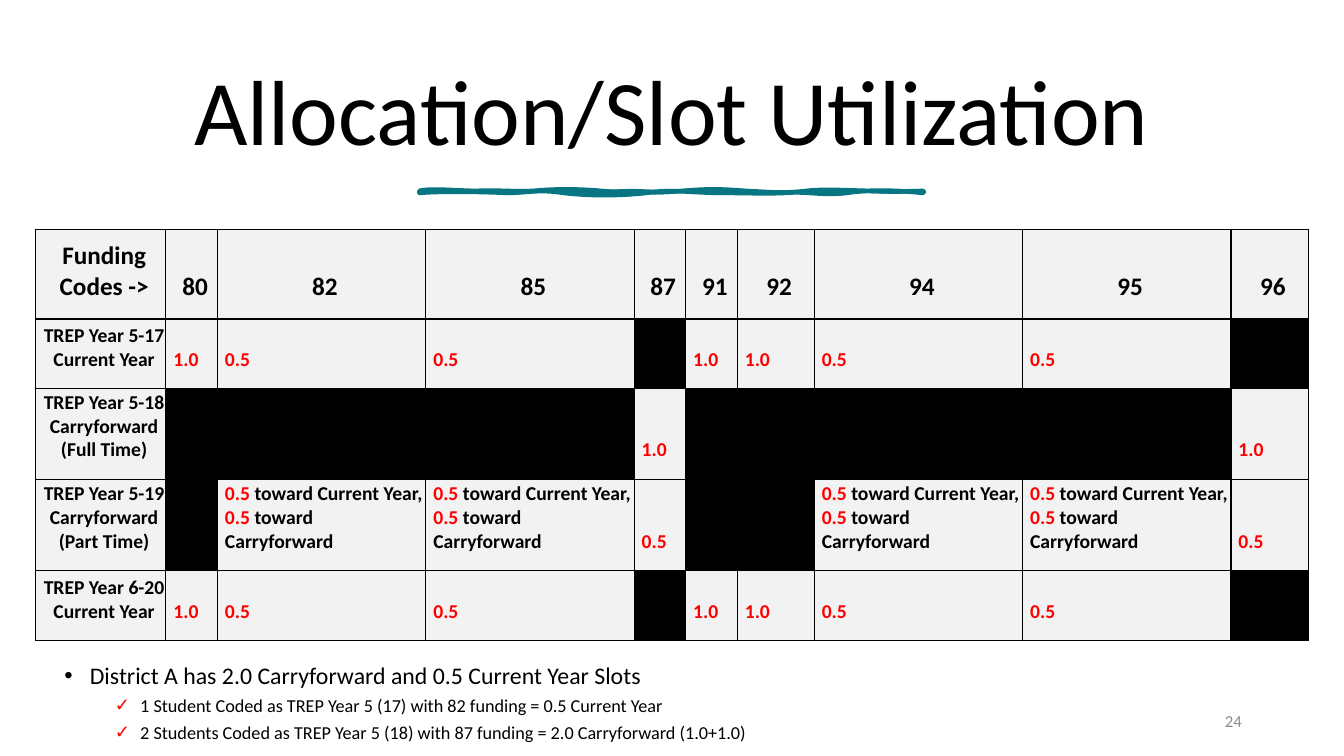
from lxml import etree
from pptx import Presentation
from pptx.dml.color import RGBColor
from pptx.enum.text import MSO_ANCHOR, MSO_AUTO_SIZE, PP_ALIGN
from pptx.oxml.ns import qn
from pptx.util import Cm, Pt

MIDDLE, BOTTOM = MSO_ANCHOR.MIDDLE, MSO_ANCHOR.BOTTOM
LEFT, CENTER, RIGHT = PP_ALIGN.LEFT, PP_ALIGN.CENTER, PP_ALIGN.RIGHT
NO_AUTOFIT = MSO_AUTO_SIZE.NONE
FONT = "Calibri"
COLORS = {"black": "000000", "red": "FF0000", "teal": "077682",
          "cell": "F2F2F2", "gray": "8C8C8C"}

COLUMN_WIDTHS = [3.28, 1.3, 5.25, 5.25, 1.3, 1.3, 1.94, 5.25, 5.25, 1.95]
ROW_HEIGHTS = [2.25, 1.75, 2.28, 2.31, 1.75]
# A bar separates the red amount from the black words that follow it.
SPLIT = "0.5| toward Current Year, |0.5| toward Carryforward"
CURRENT_YEAR = ["1.0", "0.5", "0.5", "", "1.0", "1.0", "0.5", "0.5", ""]
ROWS = [
    ["Funding Codes ->", "80", "82", "85", "87", "91", "92", "94", "95", "96"],
    ["TREP Year 5-17 Current Year", *CURRENT_YEAR],
    ["TREP Year 5-18 Carryforward\n(Full Time)",
     "", "", "", "1.0", "", "", "", "", "1.0"],
    ["TREP Year 5-19 Carryforward\n(Part Time)",
     "", SPLIT, SPLIT, "0.5", "", "", SPLIT, SPLIT, "0.5"],
    ["TREP Year 6-20 Current Year", *CURRENT_YEAR],
]
BULLETS = [
    (0, "District A has 2.0 Carryforward and 0.5 Current Year Slots"),
    (1, "1 Student Coded as TREP Year 5 (17) with 82 funding = 0.5 Current Year"),
    (1, "2 Students Coded as TREP Year 5 (18) with 87 funding = 2.0 Carryforward (1.0+1.0)"),
]
# Bullet sign, its colour, left margin in cm, text size, space before
LEVELS = [("•", "black", 0.64, 17, 10), ("✓", "red", 1.91, 13, 5)]

# Bezier points (two controls, then an end) in 1/500 of the stroke width
STROKE_OUTLINE = [
    (12, -3), (38, 0), (57, 0), (76, -1), (93, 1), (113, 0),
    (133, -2), (158, -2), (180, 0), (201, 2), (237, 2), (261, 0),
    (286, -2), (298, -2), (323, 0), (347, 1), (358, 3), (384, 0),
    (410, -3), (451, 2), (500, 0), (501, 1), (500, 1), (500, 2),
    (479, 0), (449, -2), (424, 2), (399, 5), (385, 0), (363, 2),
    (340, 3), (331, 2), (301, 2), (271, 2), (251, -2), (225, 2),
    (198, 5), (169, 5), (143, 2), (118, -2), (107, 2), (87, 2),
    (67, 1), (22, 0), (0, 2), (0, 1), (0, 0), (0, 0),
]
STROKE_BODY = [
    (16, -1), (36, -2), (62, 0), (87, 1), (92, 2), (118, 0),
    (144, -2), (158, 2), (180, 0), (202, -3), (223, -2), (251, 0),
    (279, 1), (308, -3), (328, 0), (347, 2), (386, -2), (409, 0),
    (432, 1), (456, 3), (500, 0), (500, 0), (500, 1), (500, 2),
    (463, 4), (460, 2), (424, 2), (388, -1), (380, 1), (343, 2),
    (305, 2), (300, -2), (261, 2), (223, 6), (221, 0), (205, 2),
    (188, 3), (156, 3), (128, 2), (101, 0), (88, 1), (62, 2),
    (36, 2), (25, -1), (0, 2), (0, 1), (0, 0), (0, 0),
]


def color(name):
    return RGBColor.from_string(COLORS[name])


def format_span(span, size, color_name, bold=False):
    span.font.name = FONT
    span.font.size = Pt(size)
    span.font.bold = bold
    span.font.color.rgb = color(color_name)


def place(shape, box):
    shape.left, shape.top, shape.width, shape.height = (Cm(v) for v in box)


def fill_title(page, box):
    title = page.shapes.title
    place(title, box)
    frame = title.text_frame
    frame.text = "Allocation/Slot Utilization"
    frame.auto_size = NO_AUTOFIT
    frame.vertical_anchor = MIDDLE
    para = frame.paragraphs[0]
    para.alignment = CENTER
    para.line_spacing = 0.9
    format_span(para.runs[0], 66, "black")


def bend_lines(shape):
    """Make each contour its own outline, with every three lines one Bezier curve."""
    joined = next(shape._element.iter(qn("a:path")))
    starts = joined.findall(qn("a:moveTo"))
    lines = joined.findall(qn("a:lnTo"))
    count = len(lines) // len(starts)
    settings = [{"fill": "none"}, {"stroke": "0"}]
    for number, (start, setting) in enumerate(zip(starts, settings)):
        contour = etree.SubElement(joined.getparent(), qn("a:path"),
                                   w=joined.get("w"), h=joined.get("h"), **setting)
        contour.append(start)
        for first in range(number * count, (number + 1) * count, 3):
            curve = etree.SubElement(contour, qn("a:cubicBezTo"))
            for line in lines[first:first + 3]:
                curve.append(line[0])
        etree.SubElement(contour, qn("a:close"))
    joined.getparent().remove(joined)


def draw_brush_stroke(page, left, top, width):
    unit = Cm(width) / 500
    builder = page.shapes.build_freeform(scale=unit)
    builder.add_line_segments(STROKE_OUTLINE, close=True)
    builder.move_to(0, 0)
    builder.add_line_segments(STROKE_BODY, close=True)
    stroke = builder.convert_to_shape(Cm(left), Cm(top))
    bend_lines(stroke)
    stroke.shadow.inherit = False
    stroke.fill.solid()
    stroke.fill.fore_color.rgb = color("teal")
    stroke.line.color.rgb = color("teal")
    stroke.line.width = Pt(3.25)


def style_cell(cell, fill_name):
    properties = cell._tc.get_or_add_tcPr()
    for side in ("a:lnL", "a:lnR", "a:lnT", "a:lnB"):
        line = etree.SubElement(properties, qn(side), w=str(Pt(1)))
        solid = etree.SubElement(line, qn("a:solidFill"))
        etree.SubElement(solid, qn("a:srgbClr"), val=COLORS["black"])
    cell.fill.solid()
    cell.fill.fore_color.rgb = color(fill_name)
    cell.margin_left, cell.margin_right = Cm(0.19), Cm(0.02)
    cell.margin_top, cell.margin_bottom = Cm(0.05), Cm(0.43)
    cell.vertical_anchor = BOTTOM


def write_cell(cell, text, size, is_heading):
    frame = cell.text_frame
    for number, line in enumerate(text.split("\n")):
        para = frame.add_paragraph() if number else frame.paragraphs[0]
        para.alignment = CENTER if is_heading else LEFT
        for index, part in enumerate(line.split("|")):
            span = para.add_run()
            span.text = part
            is_amount = not is_heading and index % 2 == 0
            format_span(span, size, "red" if is_amount else "black", bold=True)


def add_slot_table(page, left, top):
    table = page.shapes.add_table(
        len(ROWS), len(COLUMN_WIDTHS), Cm(left), Cm(top),
        Cm(sum(COLUMN_WIDTHS)), Cm(sum(ROW_HEIGHTS))).table
    table.first_row = table.horz_banding = False
    for column, width in zip(table.columns, COLUMN_WIDTHS):
        column.width = Cm(width)
    for row, height in zip(table.rows, ROW_HEIGHTS):
        row.height = Cm(height)
    for r, texts in enumerate(ROWS):
        for c, text in enumerate(texts):
            cell = table.cell(r, c)
            style_cell(cell, "cell" if text else "black")
            if text:
                write_cell(cell, text, 14 if r else 18, r == 0 or c == 0)


def fill_bullets(page, box):
    body = page.placeholders[1]
    place(body, box)
    frame = body.text_frame
    frame.text = "\n".join(text for level, text in BULLETS)
    frame.auto_size = NO_AUTOFIT
    for number, (para, (level, text)) in enumerate(zip(frame.paragraphs, BULLETS)):
        sign, sign_color, margin, size, space = LEVELS[level]
        para.level = level
        para.line_spacing = 0.9
        para.space_before = Pt(space if number else 0)
        properties = para._p.get_or_add_pPr()
        properties.set("marL", str(Cm(margin)))
        properties.set("indent", str(-Cm(0.64)))
        bullet_color = etree.SubElement(properties, qn("a:buClr"))
        etree.SubElement(bullet_color, qn("a:srgbClr"), val=COLORS[sign_color])
        etree.SubElement(properties, qn("a:buFont"), typeface="Arial")
        etree.SubElement(properties, qn("a:buChar"), char=sign)
        format_span(para.runs[0], size, "black")


def add_page_number(page, box):
    frame = page.shapes.add_textbox(*(Cm(v) for v in box)).text_frame
    frame.word_wrap = True
    frame.vertical_anchor = MIDDLE
    frame.text = "24"
    para = frame.paragraphs[0]
    para.alignment = RIGHT
    para.space_after = Pt(6)
    format_span(para.runs[0], 12, "gray")


def main():
    deck = Presentation()
    deck.slide_width, deck.slide_height = Cm(33.87), Cm(19.05)
    page = deck.slides.add_slide(deck.slide_layouts[1])
    fill_title(page, (1.78, 1.17, 30.3, 3.48))
    draw_brush_stroke(page, 10.57, 4.81, 12.7)
    add_slot_table(page, 0.9, 5.79)
    fill_bullets(page, (1.37, 16.61, 25.15, 2.62))
    add_page_number(page, (23.93, 17.65, 7.62, 1.02))
    deck.save("out.pptx")


if __name__ == "__main__":
    main()
